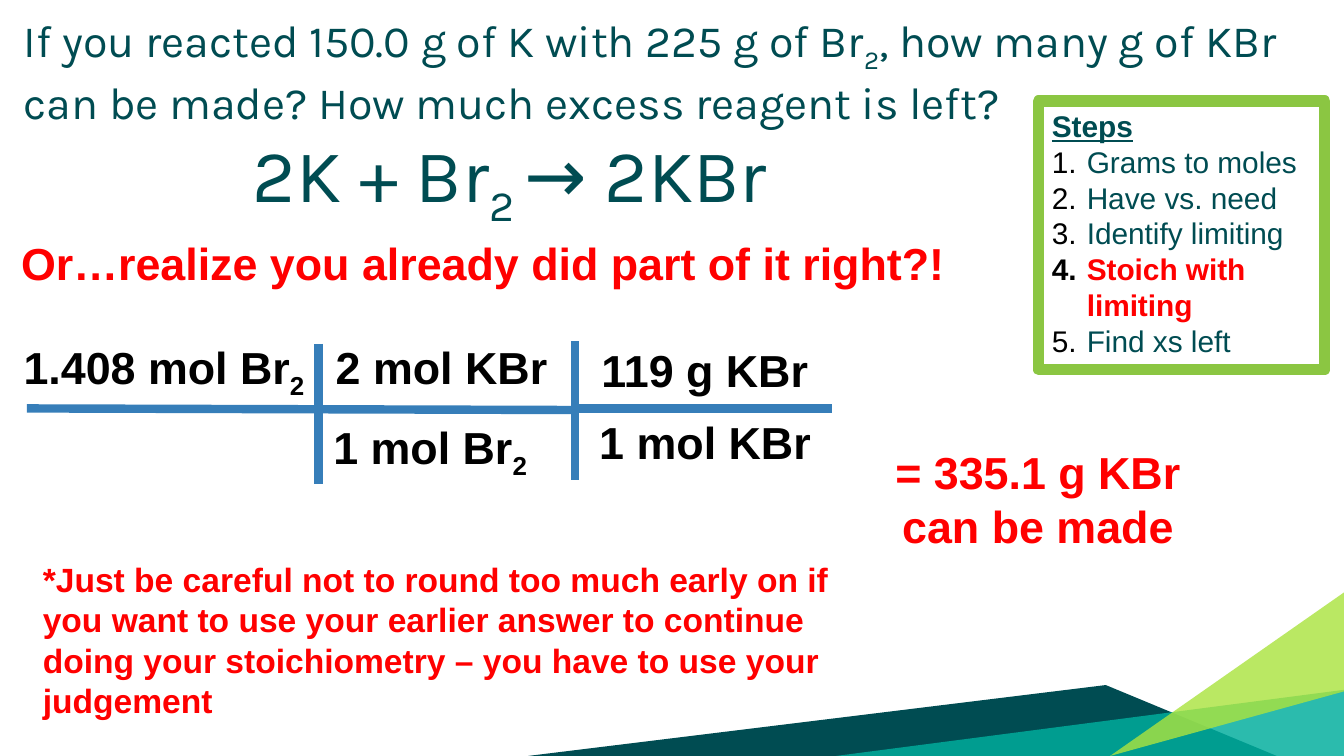
from dataclasses import dataclass

from lxml.etree import SubElement
from pptx import Presentation
from pptx.dml.color import RGBColor
from pptx.enum.shapes import MSO_CONNECTOR, MSO_SHAPE
from pptx.enum.text import MSO_ANCHOR, PP_ALIGN
from pptx.oxml.ns import qn
from pptx.util import Cm, Pt

COLORS = {
    "dark": "004C52", "teal": "00AE9D", "lime": "ABE33F", "white": "FFFFFF",
    "frame": "8BC642", "rule": "367EB9", "black": "000000", "red": "FF0000",
}


@dataclass
class Label:
    text: str
    left: float
    top: float
    width: float
    height: float = 2.13
    color: str = "black"
    size: int = 24
    align: PP_ALIGN = PP_ALIGN.CENTER
    anchor: MSO_ANCHOR = MSO_ANCHOR.MIDDLE


@dataclass
class Rule:
    start: tuple[float, float]
    end: tuple[float, float]


@dataclass
class Facet:
    points: list[tuple[float, float]]
    color: str
    opacity: int = 100


FACETS = [
    Facet([(9.98, 14.29), (24.13, 14.29), (20.9, 12.95)], "dark"),
    Facet([(25.4, 13.04), (25.4, 14.29), (15.8, 14.29)], "teal", 83),
    Facet([(25.4, 13.07), (25.4, 11.2), (20.98, 14.29)], "lime", 81),
]
LABELS = [
    Label("1.408 mol Br_2_", 0.13, 5.94, 5.94),
    Label("2 mol KBr", 5.82, 5.87, 5.05),
    Label("1 mol Br_2_", 6.02, 7.44, 4.22),
    Label("119 g KBr", 11.02, 5.92, 4.6),
    Label("1 mol KBr", 10.72, 7.29, 5.21),
    Label("= 335.1 g KBr\vcan be made", 16.48, 8.36, 6.27, color="red"),
    Label("Or…realize you already did part of it right?!", 0.15, 4.34, 23.85,
          color="red", align=PP_ALIGN.LEFT, anchor=MSO_ANCHOR.TOP),
    Label("*Just be careful not to round too much early on if you want to use your "
          "earlier answer to continue doing your stoichiometry – you have to use "
          "your judgement", 0.56, 10.44, 15.62, 3.33, "red", 18,
          PP_ALIGN.LEFT, MSO_ANCHOR.TOP),
]
RULES = [
    Rule((6.02, 6.5), (6.02, 9.14)),
    Rule((0.51, 7.72), (10.87, 7.75)),
    Rule((10.87, 6.45), (10.87, 9.07)),
    Rule((10.95, 7.72), (15.72, 7.72)),
]
STEPS = ["Grams to moles", "Have vs. need", "Identify limiting",
         "Stoich with\vlimiting", "Find xs left"]
CURRENT_STEP = "Stoich with\vlimiting"


def rgb(name: str) -> RGBColor:
    return RGBColor.from_string(COLORS[name])


def write(paragraph, text: str, *, size: int, color: str, font: str = "Arial",
          bold: bool = False, underline: bool = False,
          align: PP_ALIGN = PP_ALIGN.LEFT) -> None:
    """Add formatted text; a part between underscores becomes a subscript."""
    paragraph.alignment = align
    for index, part in enumerate(text.split("_")):
        if not part:
            continue
        for number, line in enumerate(part.split("\v")):
            if number:
                paragraph.add_line_break()
            span = paragraph.add_run()
            span.text = line
            span.font.size = Pt(size)
            span.font.name = font
            span.font.bold = bold
            span.font.underline = underline
            span.font.color.rgb = rgb(color)
            if index % 2:
                span.font._element.set("baseline", "-25000")


def indent(paragraph, left: float, first: float = 0) -> None:
    properties = paragraph._p.get_or_add_pPr()
    properties.set("marL", str(Cm(left)))
    properties.set("indent", str(Cm(first)))


def number_step(paragraph) -> None:
    indent(paragraph, 0.66, -0.66)
    properties = paragraph._p.get_or_add_pPr()
    color = SubElement(properties, qn("a:buClr"))
    SubElement(color, qn("a:srgbClr"), val=COLORS["black"])
    SubElement(properties, qn("a:buFont"), typeface="+mj-lt")
    SubElement(properties, qn("a:buAutoNum"), type="arabicPeriod")


def draw_facet(page, facet: Facet) -> None:
    (x, y), *others = [(Cm(left), Cm(top)) for left, top in facet.points]
    builder = page.shapes.build_freeform(x, y)
    builder.add_line_segments(others, close=True)
    shape = builder.convert_to_shape()
    shape.shadow.inherit = False
    shape.line.fill.background()
    shape.fill.solid()
    shape.fill.fore_color.rgb = rgb(facet.color)
    if facet.opacity < 100:
        color = shape._element.spPr.find(qn("a:solidFill")).find(qn("a:srgbClr"))
        SubElement(color, qn("a:alpha"), val=str(facet.opacity * 1000))


def draw_rule(page, rule: Rule) -> None:
    line = page.shapes.add_connector(
        MSO_CONNECTOR.STRAIGHT, *map(Cm, rule.start), *map(Cm, rule.end))
    line.line.color.rgb = rgb("rule")
    line.line.width = Pt(4.5)
    SubElement(line._element.spPr, qn("a:effectLst"))


def draw_label(page, label: Label) -> None:
    box = page.shapes.add_textbox(
        Cm(label.left), Cm(label.top), Cm(label.width), Cm(label.height))
    frame = box.text_frame
    frame.word_wrap = True
    frame.vertical_anchor = label.anchor
    write(frame.paragraphs[0], label.text, size=label.size, color=label.color,
          bold=True, align=label.align)


def draw_question(page) -> None:
    frame = page.shapes.add_textbox(0, 0, Cm(25.4), Cm(4.45)).text_frame
    frame.word_wrap = True
    frame.margin_top = frame.margin_bottom = Cm(0.25)
    question = frame.paragraphs[0]
    indent(question, 0.2)
    write(question, "If you reacted 150.0 g of K with 225 g of Br_2_, how many g of "
          "KBr can be made? How much excess reagent is left?",
          size=24, color="dark", font="Karla")
    equation = frame.add_paragraph()
    indent(equation, 4.53)
    write(equation, "2K + Br_2 _→ 2KBr", size=40, color="dark", font="Karla")


def draw_steps(page) -> None:
    box = page.shapes.add_shape(
        MSO_SHAPE.RECTANGLE, Cm(19.63), Cm(1.91), Cm(5.41), Cm(5.08))
    box.shadow.inherit = False
    box.fill.solid()
    box.fill.fore_color.rgb = rgb("white")
    box.line.color.rgb = rgb("frame")
    box.line.width = Pt(6)
    frame = box.text_frame
    frame.word_wrap = True
    frame.vertical_anchor = MSO_ANCHOR.TOP
    heading = frame.paragraphs[0]
    tabs = SubElement(heading._p.get_or_add_pPr(), qn("a:tabLst"))
    SubElement(tabs, qn("a:tab"), pos=str(Cm(4.5)), algn="l")
    write(heading, "Steps\t", size=16, color="dark", bold=True, underline=True)
    for step in STEPS:
        paragraph = frame.add_paragraph()
        number_step(paragraph)
        current = step == CURRENT_STEP
        write(paragraph, step, size=16, color="red" if current else "dark",
              bold=current)


def main() -> None:
    deck = Presentation()
    deck.slide_width, deck.slide_height = Cm(25.4), Cm(14.29)
    page = deck.slides.add_slide(deck.slide_layouts[6])
    for facet in FACETS:
        draw_facet(page, facet)
    draw_question(page)
    draw_steps(page)
    for label in LABELS:
        draw_label(page, label)
    for rule in RULES:
        draw_rule(page, rule)
    deck.save("out.pptx")


if __name__ == "__main__":
    main()
